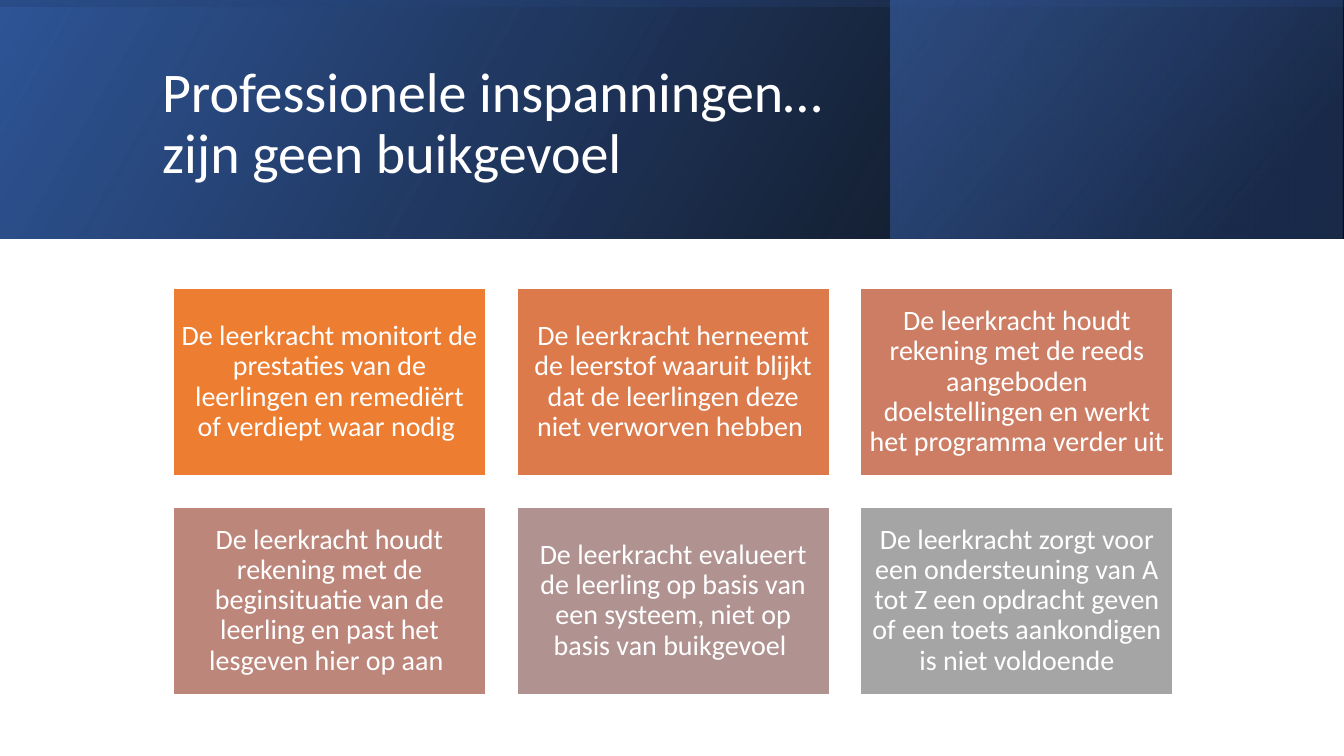
from dataclasses import dataclass

import pptx
import pptx.dml.color
import pptx.enum.shapes
import pptx.enum.text
import pptx.util
import pptx.oxml
import pptx.oxml.ns
import lxml.etree

Pt = pptx.util.Pt
RGB = pptx.dml.color.RGBColor.from_string
RECT = pptx.enum.shapes.MSO_SHAPE.RECTANGLE
MIDDLE = pptx.enum.text.MSO_ANCHOR.MIDDLE
ALIGN = pptx.enum.text.PP_ALIGN

COLORS = {
    "white": "FFFFFF", "black": "000000", "blue": "2F5597",
    "navy": "203864", "sky": "4472C4",
    "orange": "ED7D31", "rust": "DC7A4B", "coral": "CC7D64",
    "rose": "BD867B", "mauve": "B09391", "gray": "A5A5A5",
}
WIDE, HIGH, BAND = 960, 540, 170.6


@dataclass
class Stop:
    place: float
    color: str
    alpha: int


@dataclass
class Panel:
    left: float
    top: float
    width: float
    height: float
    angle: int
    stops: tuple[Stop, Stop]
    turn: int = 0


@dataclass
class Card:
    color: str
    text: str


PANELS = [
    Panel(0, 0, WIDE, BAND, 30,
          (Stop(0, "black", 96), Stop(1, "blue", 100))),
    Panel(636.2, 0, 323, BAND, 40,
          (Stop(0.19, "navy", 68), Stop(1, "sky", 48))),
    Panel((WIDE - BAND) / 2, (BAND - WIDE) / 2, BAND, WIDE, 10,
          (Stop(0.23, "blue", 16), Stop(0.99, "black", 45)), 270),
]
TITLE = ["Professionele inspanningen…", "zijn geen buikgevoel"]
CARDS = [
    Card("orange", "De leerkracht monitort de prestaties van de leerlingen "
         "en remediërt of verdiept waar nodig "),
    Card("rust", "De leerkracht herneemt de leerstof waaruit blijkt dat de "
         "leerlingen deze niet verworven hebben "),
    Card("coral", "De leerkracht houdt rekening met de reeds aangeboden "
         "doelstellingen en werkt het programma verder uit "),
    Card("rose", "De leerkracht houdt rekening met de beginsituatie van de "
         "leerling en past het lesgeven hier op aan "),
    Card("mauve", "De leerkracht evalueert de leerling op basis van een "
         "systeem, niet op basis van buikgevoel "),
    Card("gray", "De leerkracht zorgt voor een ondersteuning van A tot Z een "
         "opdracht geven of een toets aankondigen is niet voldoende"),
]
COLS, LEFT, TOP = 3, 123.8, 205.9
CARD_W, CARD_H, GAP = 223.2, 133.9, 22.3
INSET = Pt(5.8)
FRAME = {"word_wrap": True, "vertical_anchor": MIDDLE}
PAD = {"margin_left": INSET, "margin_right": INSET,
       "margin_top": INSET, "margin_bottom": INSET}


def apply(item: object, form: dict) -> None:
    for name, value in form.items():
        setattr(item, name, value)


def write(frame, lines: list[str], size: int, align) -> None:
    """Fill a frame with one paragraph, broken between the lines."""
    para = frame.paragraphs[0]
    apply(para, {"alignment": align, "line_spacing": 0.9})
    for index, line in enumerate(lines):
        if index:
            para.add_line_break()
        run = para.add_run()
        run.text = line
        apply(run.font, {"name": "Calibri", "size": Pt(size)})
        run.font.color.rgb = RGB(COLORS["white"])


def add_rect(slide, left: float, top: float, width: float, height: float):
    shape = slide.shapes.add_shape(
        RECT, Pt(left), Pt(top), Pt(width), Pt(height))
    shape.shadow.inherit = False
    return shape


def add_panel(slide, panel: Panel) -> None:
    """Draw a mirrored rectangle with a see-through gradient."""
    shape = add_rect(slide, panel.left, panel.top, panel.width, panel.height)
    shape.rotation = panel.turn
    shape.element.spPr.xfrm.set("flipH", "1")
    shape.line.fill.background()
    shape.fill.gradient()
    shape.fill.gradient_angle = panel.angle
    for mark, stop in zip(shape.fill.gradient_stops, panel.stops):
        mark.position = stop.place
        mark.color.rgb = RGB(COLORS[stop.color])
    tag = pptx.oxml.ns.qn("a:srgbClr")
    for node, stop in zip(shape.element.spPr.iter(tag), panel.stops):
        lxml.etree.SubElement(node, pptx.oxml.ns.qn("a:alpha"),
                              val=str(stop.alpha * 1000))


def add_title(slide) -> None:
    box = slide.shapes.add_textbox(Pt(108.7), Pt(27.4), Pt(765.4), Pt(123.8))
    apply(box.text_frame, FRAME)
    write(box.text_frame, TITLE, 40, ALIGN.LEFT)


def add_card(slide, card: Card, index: int) -> None:
    row, col = divmod(index, COLS)
    shape = add_rect(slide, LEFT + col * (CARD_W + GAP),
                     TOP + row * (CARD_H + GAP), CARD_W, CARD_H)
    shape.fill.solid()
    shape.fill.fore_color.rgb = RGB(COLORS[card.color])
    shape.line.color.rgb = RGB(COLORS["white"])
    shape.line.width = Pt(1)
    apply(shape.text_frame, FRAME | PAD)
    write(shape.text_frame, [card.text], 20, ALIGN.CENTER)


def main() -> None:
    deck = pptx.Presentation()
    apply(deck, {"slide_width": Pt(WIDE), "slide_height": Pt(HIGH)})
    slide = deck.slides.add_slide(deck.slide_layouts[6])
    for panel in PANELS:
        add_panel(slide, panel)
    add_title(slide)
    for index, card in enumerate(CARDS):
        add_card(slide, card, index)
    deck.save("out.pptx")


if __name__ == "__main__":
    main()
